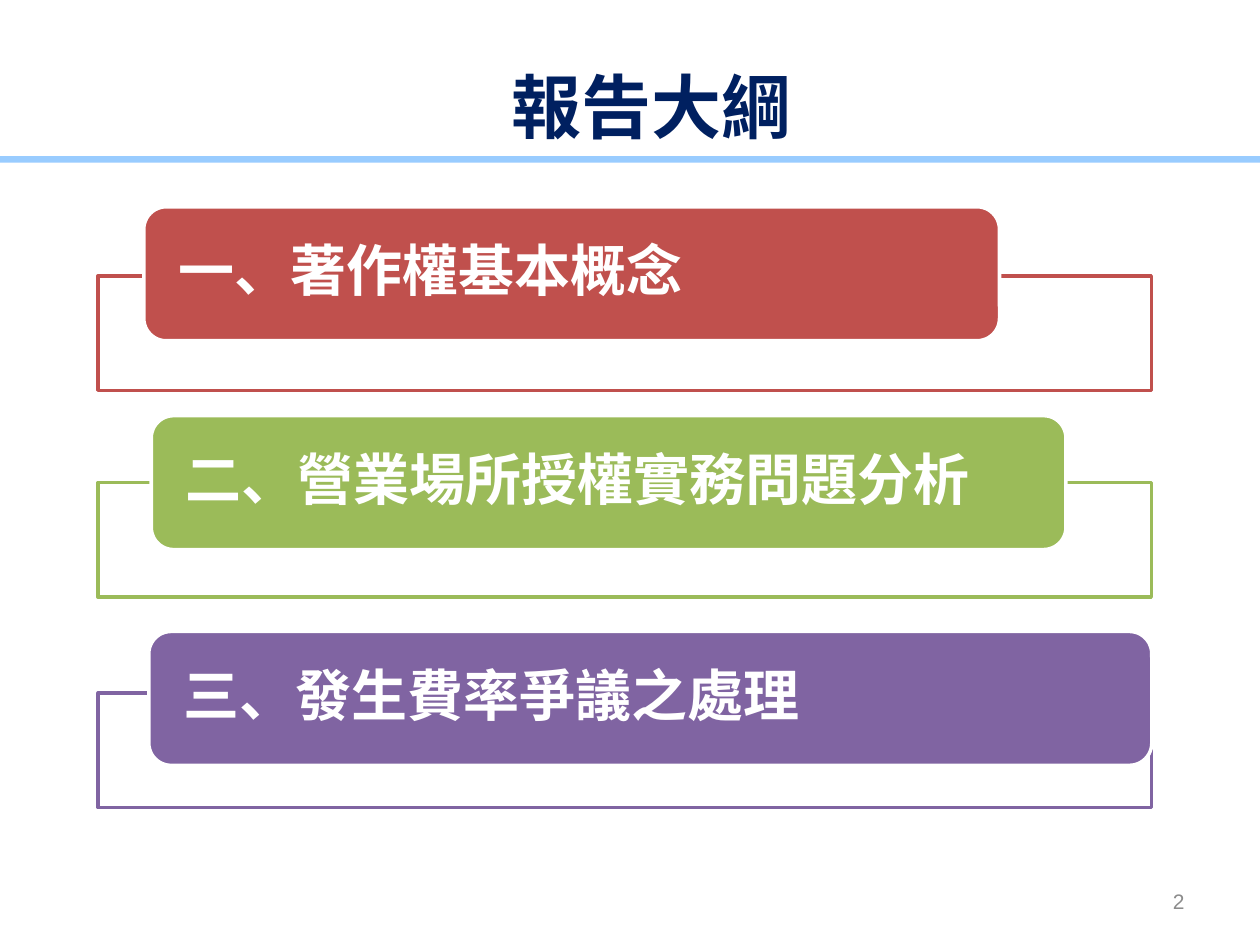
from lxml.etree import SubElement
from pptx import Presentation
from pptx.dml.color import RGBColor
from pptx.enum.shapes import MSO_SHAPE
from pptx.enum.text import MSO_ANCHOR, PP_ALIGN
from pptx.oxml.ns import qn
from pptx.util import Cm, Pt

CJK = "Noto Sans CJK SC"
FRAME_LEFT, FRAME_WIDTH, FRAME_HEIGHT = 1.98, 21.23, 2.31
LABEL_HEIGHT = 2.7

# heading, colour, frame top, label left, label top, label width (cm)
CHAPTERS = [
    ("一、著作權基本概念", "C0504D", 5.56, 2.9, 4.17, 17.25),
    ("二、營業場所授權實務問題分析", "9BBB59", 9.73, 3.05, 8.38, 18.44),
    ("三、發生費率爭議之處理", "8064A2", 13.97, 3, 12.73, 20.22),
]


def color(hex_code):
    return RGBColor.from_string(hex_code)


def write(holder, text, *, size, ink, font=CJK, bold=False,
          align=PP_ALIGN.LEFT, side_inset=0.25, end_inset=0.13, hanging=0,
          line_spacing=None):
    frame = holder.text_frame
    frame.word_wrap = True
    frame.vertical_anchor = MSO_ANCHOR.MIDDLE
    frame.margin_left = frame.margin_right = Cm(side_inset)
    frame.margin_top = frame.margin_bottom = Cm(end_inset)
    paragraph = frame.paragraphs[0]
    paragraph.alignment = align
    paragraph.line_spacing = line_spacing
    if hanging:
        properties = paragraph._p.get_or_add_pPr()
        properties.set("marL", str(Cm(hanging)))
        properties.set("indent", str(-Cm(hanging)))
    run = paragraph.add_run()
    run.text = text
    run.font.name = font
    run.font.size = Pt(size)
    run.font.bold = bold
    run.font.color.rgb = color(ink)
    # East Asian glyphs take their own typeface entry
    SubElement(run._r.get_or_add_rPr(), qn("a:ea")).set("typeface", font)


def add_block(slide, preset, left, top, width, height, fill, line=None):
    block = slide.shapes.add_shape(preset, Cm(left), Cm(top), Cm(width), Cm(height))
    block.shadow.inherit = False
    block.fill.solid()
    block.fill.fore_color.rgb = color(fill)
    if line:
        block.line.color.rgb = color(line)
        block.line.width = Pt(2)
    else:
        block.line.fill.background()
    return block


def set_opacity(block, percent):
    tone = block._element.spPr.find(qn("a:solidFill"))[0]
    SubElement(tone, qn("a:alpha")).set("val", str(percent * 1000))


def add_chapter(slide, heading, tint, frame_top, left, top, width):
    frame = add_block(slide, MSO_SHAPE.RECTANGLE, FRAME_LEFT, frame_top,
                      FRAME_WIDTH, FRAME_HEIGHT, "FFFFFF", tint)
    set_opacity(frame, 90)
    label = add_block(slide, MSO_SHAPE.ROUNDED_RECTANGLE, left, top,
                      width, LABEL_HEIGHT, tint, "FFFFFF")
    write(label, heading, size=32, ink="FFFFFF", bold=True, side_inset=0.56,
          end_inset=0, hanging=1.98, line_spacing=0.9)


def add_title(slide, text):
    title = slide.shapes.title
    title.left, title.top = Cm(1.7), Cm(0.53)
    title.width, title.height = Cm(22.86), Cm(3.18)
    write(title, text, size=40, ink="002060", bold=True, align=PP_ALIGN.CENTER)


def add_page_number(slide, number):
    page = slide.shapes.add_textbox(Cm(18.21), Cm(17.65), Cm(5.92), Cm(1.02))
    write(page, number, size=12, ink="8C8C8C", font="Arial", align=PP_ALIGN.RIGHT)


def main():
    deck = Presentation()
    deck.slide_width, deck.slide_height = Cm(25.4), Cm(19.05)
    slide = deck.slides.add_slide(deck.slide_layouts[5])

    # Title and the rule beneath it
    add_block(slide, MSO_SHAPE.RECTANGLE, -0.1, 3.15, 25.55, 0.13, "99CCFF")
    add_title(slide, "報告大綱")

    # Outline chapters
    for chapter in CHAPTERS:
        add_chapter(slide, *chapter)

    add_page_number(slide, "2")
    deck.save("out.pptx")


if __name__ == "__main__":
    main()
